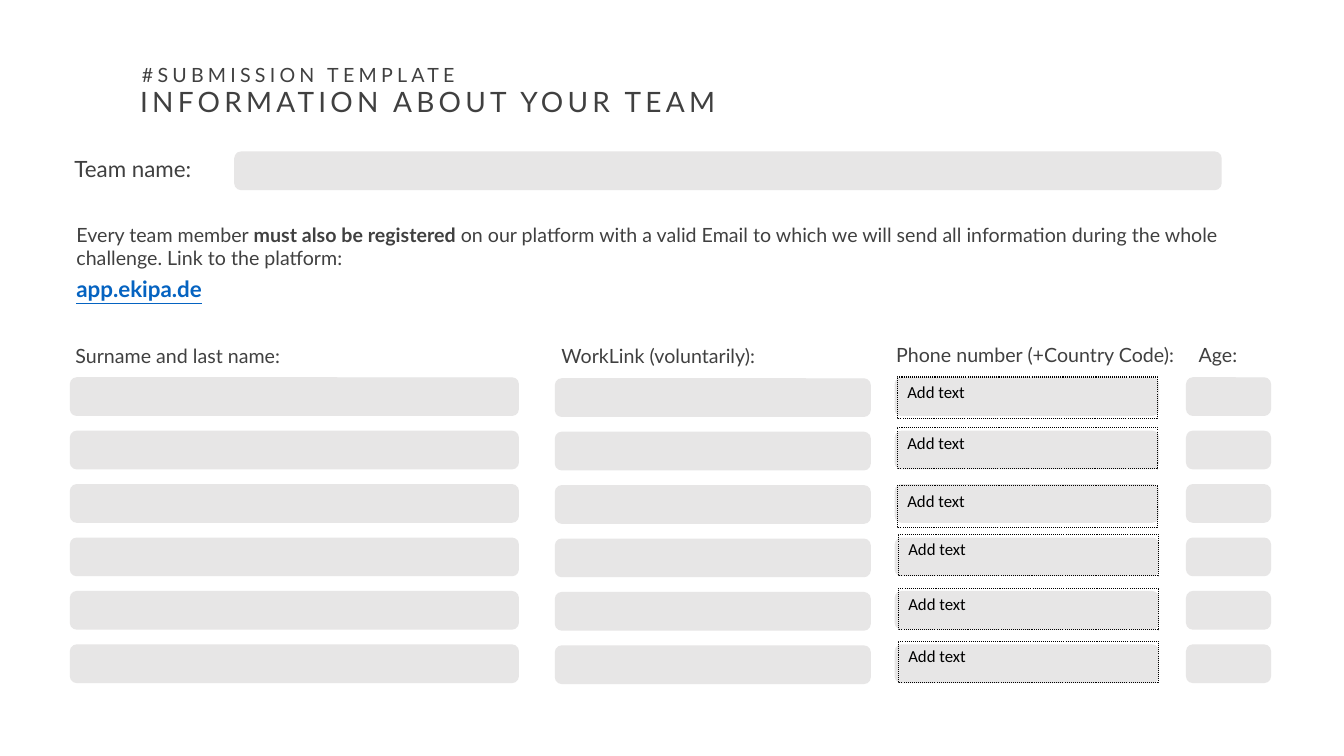
from pptx import Presentation
from pptx.dml.color import RGBColor
from pptx.enum.dml import MSO_LINE
from pptx.enum.shapes import MSO_SHAPE
from pptx.enum.text import MSO_ANCHOR, MSO_AUTO_SIZE, PP_ALIGN
from pptx.util import Emu, Pt

ROUNDED, RECTANGLE = MSO_SHAPE.ROUNDED_RECTANGLE, MSO_SHAPE.RECTANGLE
DOTTED, TOP, LEFT = MSO_LINE.ROUND_DOT, MSO_ANCHOR.TOP, PP_ALIGN.LEFT
NO_FIT = MSO_AUTO_SIZE.NONE
PX = 9144
INK, FIELD, LINK, BLACK = "404040", "E7E6E6", "0563C1", "000000"

HEADING = "INFORMATION ABOUT YOUR TEAM"
HEADING_BOX = (129, 79, 1146, 44)
LABELS = [
    ("#SUBMISSION TEMPLATE", (131, 58, 1146, 34), {"spacing": 3}),
    ("Team name:", (64, 149, 781, 37), {"size": 16}),
    ("app.ekipa.de", (66, 268, 157, 37),
     {"size": 16, "color": LINK, "bold": True, "underline": True}),
    ("Surname and last name:", (65, 336, 506, 34), {}),
    ("WorkLink (voluntarily):", (547, 336, 281, 34), {}),
    ("Phone number (+Country Code):", (879, 335, 314, 34), {}),
    ("Age:", (1179, 335, 132, 34), {}),
]
NOTICE = [
    ("Every team member ", False),
    ("must also be registered ", True),
    ("on our platform with a valid Email to which we will send all information "
     "during the whole challenge. Link to the platform:", False),
]
NOTICE_BOX = (66, 216, 1222, 57)
TEAM_FIELD = (233, 151, 978, 37)
COLUMNS = [(70, 375, 444), (551, 376, 312), (888, 375, 261), (1177, 375, 83)]
MEMBERS, ROW_PITCH, FIELD_HEIGHT = 6, 53, 37
PHONE_PROMPT = "Add text"
PHONE_PROMPTS = [(890, 374), (890, 424), (890, 482), (891, 530), (891, 584), (891, 636)]


def rgb(color):
    return RGBColor.from_string(color)


def emu(box):
    return [Emu(length * PX) for length in box]


def write(frame, text, size=14, font="Lato", color=INK, bold=False,
          underline=False, spacing=0):
    frame.word_wrap = True
    frame.auto_size = NO_FIT
    frame.vertical_anchor = TOP
    paragraph = frame.paragraphs[0]
    paragraph.alignment = LEFT
    runs = [(text, bold)] if isinstance(text, str) else text
    for words, heavy in runs:
        run = paragraph.add_run()
        run.text = words
        run.font.size = Pt(size)
        run.font.name = font
        run.font.bold = heavy
        run.font.underline = underline
        run.font.color.rgb = rgb(color)
        if spacing:
            run.font._element.set("spc", str(spacing * 100))


def add_label(slide, text, box, **style):
    write(slide.shapes.add_textbox(*emu(box)).text_frame, text, **style)


def add_field(slide, box):
    field = slide.shapes.add_shape(ROUNDED, *emu(box))
    field.shadow.inherit = False
    field.fill.solid()
    field.fill.fore_color.rgb = rgb(FIELD)
    field.line.color.rgb = rgb(FIELD)
    field.line.width = Pt(1)


def add_prompt(slide, box):
    prompt = slide.shapes.add_shape(RECTANGLE, *emu(box))
    prompt.shadow.inherit = False
    prompt.fill.background()
    prompt.line.color.rgb = rgb(BLACK)
    prompt.line.width = Pt(0.75)
    prompt.line.dash_style = DOTTED
    write(prompt.text_frame, PHONE_PROMPT, size=12, font="Calibri", color=BLACK)


def main():
    deck = Presentation()
    deck.slide_width, deck.slide_height = emu((1333, 750))
    slide = deck.slides.add_slide(deck.slide_layouts[5])

    heading = slide.shapes.title
    heading.left, heading.top, heading.width, heading.height = emu(HEADING_BOX)
    write(heading.text_frame, HEADING, size=20, spacing=3)

    add_field(slide, TEAM_FIELD)
    for left, top, width in COLUMNS:
        for member in range(MEMBERS):
            add_field(slide, (left, top + member * ROW_PITCH, width, FIELD_HEIGHT))
    for text, box, style in LABELS:
        add_label(slide, text, box, **style)
    add_label(slide, NOTICE, NOTICE_BOX)
    for left, top in PHONE_PROMPTS:
        add_prompt(slide, (left, top, 258, 41))

    deck.save("out.pptx")


if __name__ == "__main__":
    main()
